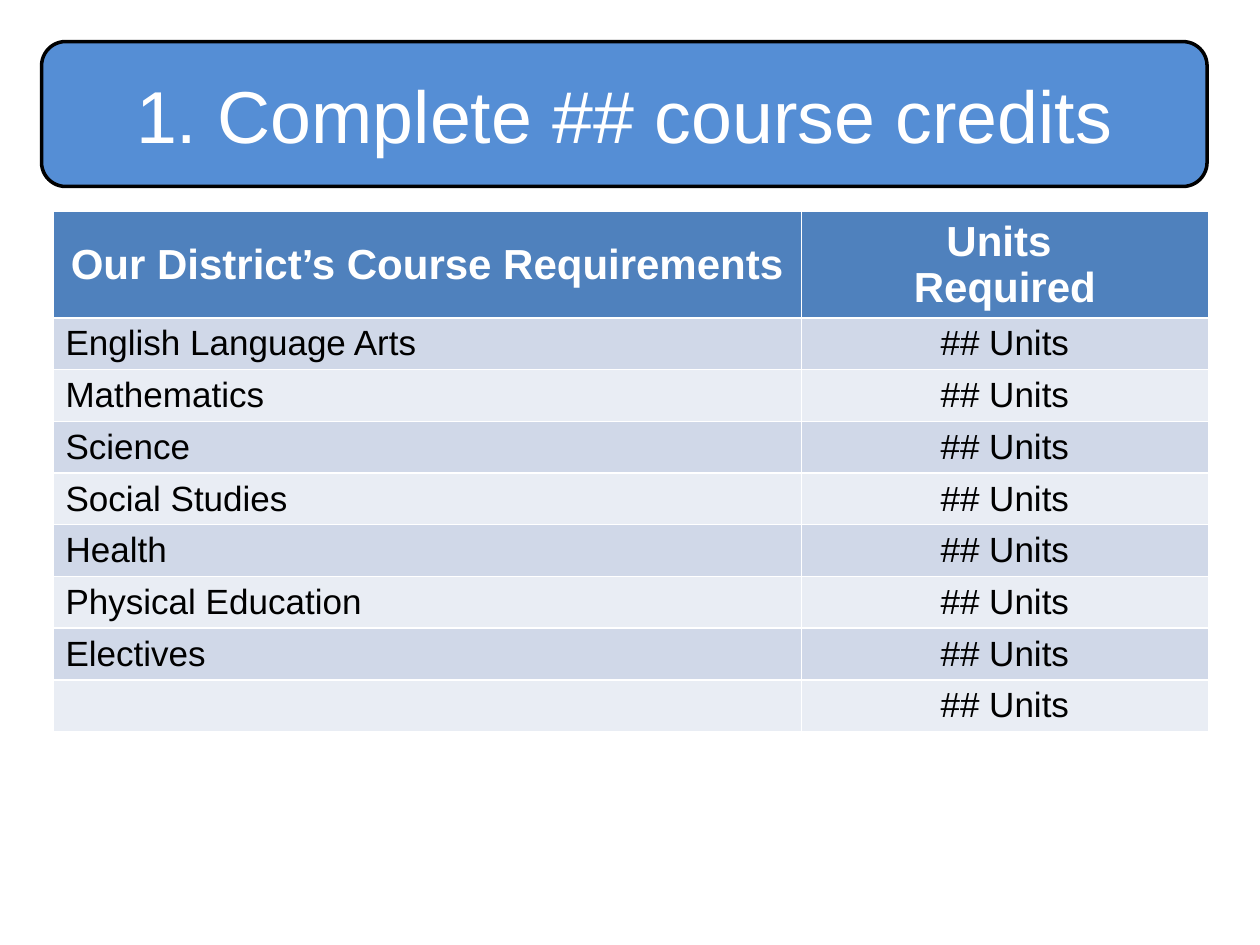
"""Builds the course credit requirements slide."""
from pptx import Presentation
from pptx.dml.color import RGBColor
from pptx.enum.shapes import MSO_SHAPE
from pptx.enum.text import MSO_ANCHOR, PP_ALIGN
from pptx.util import Inches, Pt

CENTER, LEFT = PP_ALIGN.CENTER, PP_ALIGN.LEFT
MIDDLE, TOP = MSO_ANCHOR.MIDDLE, MSO_ANCHOR.TOP
ROUND_RECT = MSO_SHAPE.ROUNDED_RECTANGLE

TITLE = "1. Complete ## course credits"
HEADER = ("Our District’s Course Requirements", "Units \nRequired")
COURSES = ["English Language Arts", "Mathematics", "Science", "Social Studies",
           "Health", "Physical Education", "Electives", ""]
UNITS = "## Units"

FONT = "Arial"
COLORS = {"banner": "558ED5", "header": "4F81BD", "odd": "D0D8E8",
          "even": "E9EDF4", "white": "FFFFFF", "black": "000000"}
BANNER = (0.33, 0.33, 9.25, 1.15)
TABLE_LEFT, TABLE_TOP = 0.42, 1.68
COL_WIDTHS = (5.94, 3.23)
HEADER_HEIGHT, ROW_HEIGHT = 0.71, 0.4


def rgb(name):
    return RGBColor.from_string(COLORS[name])


def write(tf, text, size, color, align, bold=False):
    tf.text = text
    for p in tf.paragraphs:
        p.alignment = align
        for r in p.runs:
            r.font.name, r.font.size, r.font.bold = FONT, Pt(size), bold
            r.font.color.rgb = rgb(color)


def add_requirements(s):
    rows = [HEADER] + [(course, UNITS) for course in COURSES]
    heights = [HEADER_HEIGHT] + [ROW_HEIGHT] * len(COURSES)
    box = (TABLE_LEFT, TABLE_TOP, sum(COL_WIDTHS), sum(heights))
    table = s.shapes.add_table(len(rows), len(COL_WIDTHS), *map(Inches, box)).table
    for column, width in zip(table.columns, COL_WIDTHS):
        column.width = Inches(width)
    for i, (texts, height) in enumerate(zip(rows, heights)):
        table.rows[i].height = Inches(height)
        head = i == 0
        fill = "header" if head else "odd" if i % 2 else "even"
        for j, text in enumerate(texts):
            cell = table.cell(i, j)
            cell.fill.solid()
            cell.fill.fore_color.rgb = rgb(fill)
            cell.vertical_anchor = MIDDLE if head else TOP
            write(cell.text_frame, text, 24 if head else 20,
                  "white" if head else "black",
                  CENTER if head or j else LEFT, head)


def add_banner(s):
    sp = s.shapes.add_shape(ROUND_RECT, *map(Inches, BANNER))
    sp.shadow.inherit = False
    sp.fill.solid()
    sp.fill.fore_color.rgb = rgb("banner")
    sp.line.color.rgb = rgb("black")
    sp.line.width = Pt(2)
    sp.text_frame.word_wrap = True
    sp.text_frame.vertical_anchor = MIDDLE
    write(sp.text_frame, TITLE, 42, "white", CENTER)


def main():
    prs = Presentation()
    prs.slide_width, prs.slide_height = Inches(10), Inches(7.5)
    s = prs.slides.add_slide(prs.slide_layouts[6])
    add_requirements(s)
    add_banner(s)
    prs.save("out.pptx")


if __name__ == "__main__":
    main()
